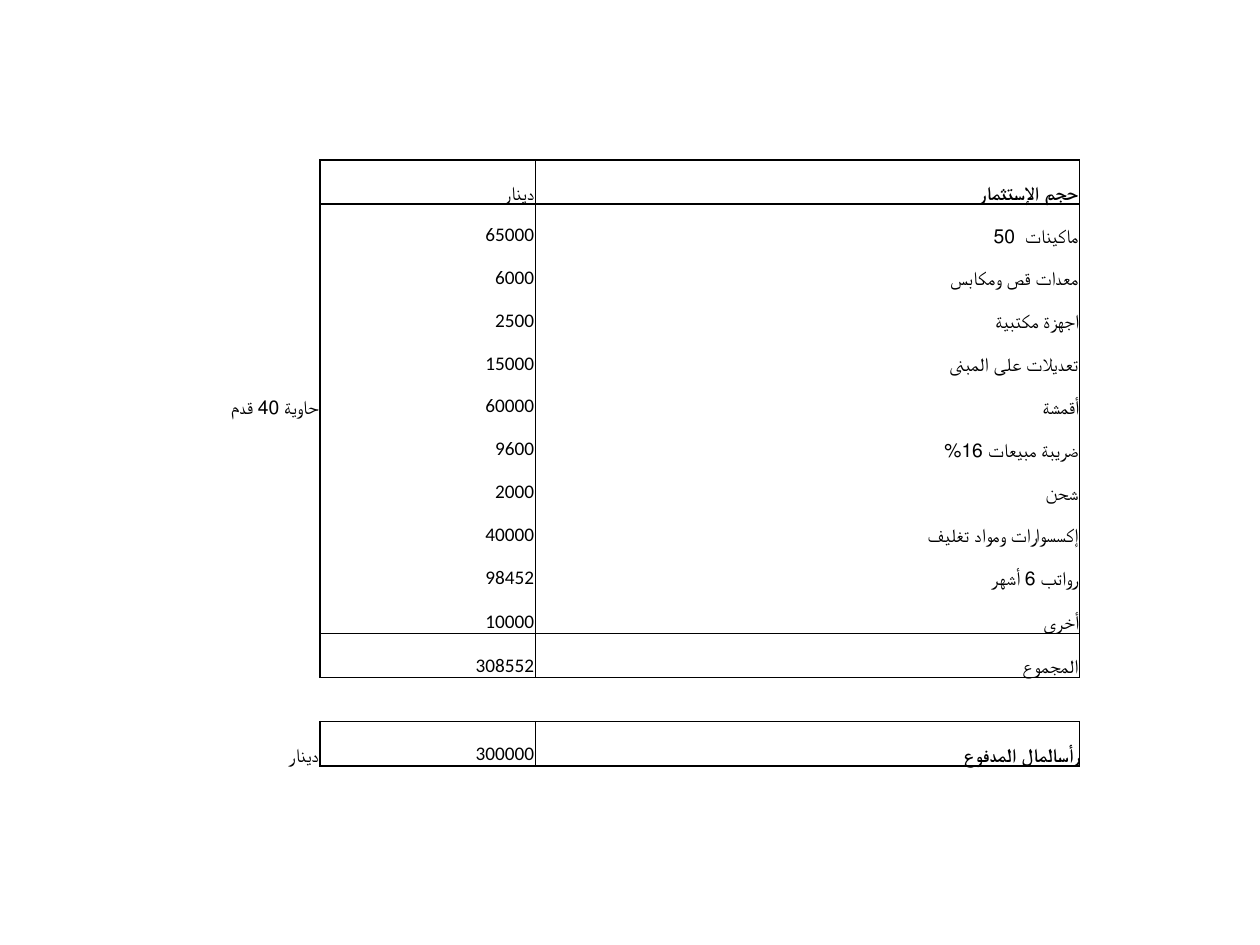
import pptx
import pptx.dml.color
import pptx.enum.text
import pptx.oxml
import pptx.oxml.ns
import pptx.util
from pptx.util import Inches

HUES = {"ink": "000000"}
FONT = "Calibri"
WIDTHS = [1.71, 1.71, 4.32]
TALL = {0, 1, 11, 12, 13, 14}
RULES = {1, 2, 12, 13, 14, 15}
GAPS = {0, 13, 15}
BOLD = {1, 14}
ROWS = [
    ("", "", ""),
    ("", "دينار", "حجم الإستثمار"),
    ("", "65000", "ماكينات  50"),
    ("", "6000", "معدات قص ومكابس"),
    ("", "2500", "اجهزة مكتبية"),
    ("", "15000", "تعديلات على المبنى"),
    ("حاوية 40 قدم", "60000", "أقمشة"),
    ("", "9600", "ضريبة مبيعات 16%"),
    ("", "2000", "شحن"),
    ("", "40000", "إكسسوارات ومواد تغليف"),
    ("", "98452", "رواتب 6 أشهر"),
    ("", "10000", "أخرى"),
    ("", "308552", "المجموع"),
    ("", "", ""),
    ("دينار", "300000", "رأسالمال المدفوع"),
    ("", "", ""),
]


def add_edge(cell, side, drawn):
    fill = "<a:noFill/>"
    if drawn:
        fill = f'<a:solidFill><a:srgbClr val="{HUES["ink"]}"/></a:solidFill>'
    space = pptx.oxml.ns.nsdecls("a")
    width = pptx.util.Pt(1)
    edge = pptx.oxml.parse_xml(f'<a:ln{side} {space} w="{width}">{fill}</a:ln{side}>')
    cell._tc.get_or_add_tcPr().append(edge)


def add_grid(cell, row, col):
    inside = row not in GAPS
    add_edge(cell, "L", inside and col > 0)
    add_edge(cell, "R", inside)
    add_edge(cell, "T", col > 0 and row in RULES)
    add_edge(cell, "B", col > 0 and row + 1 in RULES)
    cell.fill.background()


def set_text(cell, text, bold):
    cell.margin_left = cell.margin_right = cell.margin_top = Inches(0.01)
    cell.margin_bottom = 0
    cell.vertical_anchor = pptx.enum.text.MSO_ANCHOR.BOTTOM
    if not text:
        return
    cell.text_frame.text = text
    line = cell.text_frame.paragraphs[0]
    line.alignment = pptx.enum.text.PP_ALIGN.RIGHT
    if not text.isdigit():
        line._p.get_or_add_pPr().set("rtl", "1")
    font = line.runs[0].font
    font.name = FONT
    font.size = pptx.util.Pt(11)
    font.bold = bold
    font.color.rgb = pptx.dml.color.RGBColor.from_string(HUES["ink"])


def add_costs(slide):
    frame = slide.shapes.add_table(
        len(ROWS), len(WIDTHS), Inches(0.83), Inches(0.92), Inches(7.75), Inches(5.5)
    )
    table = frame.table
    table.first_row = table.horz_banding = False
    for col, width in enumerate(WIDTHS):
        table.columns[col].width = Inches(width)
    for row, texts in enumerate(ROWS):
        table.rows[row].height = Inches(0.35 if row in TALL else 0.34)
        for col, text in enumerate(texts):
            cell = table.cell(row, col)
            set_text(cell, text, col == 2 and row in BOLD)
            add_grid(cell, row, col)


def main():
    deck = pptx.Presentation()
    deck.slide_width = Inches(10)
    deck.slide_height = Inches(7.5)
    add_costs(deck.slides.add_slide(deck.slide_layouts[6]))
    deck.save("out.pptx")


if __name__ == "__main__":
    main()
